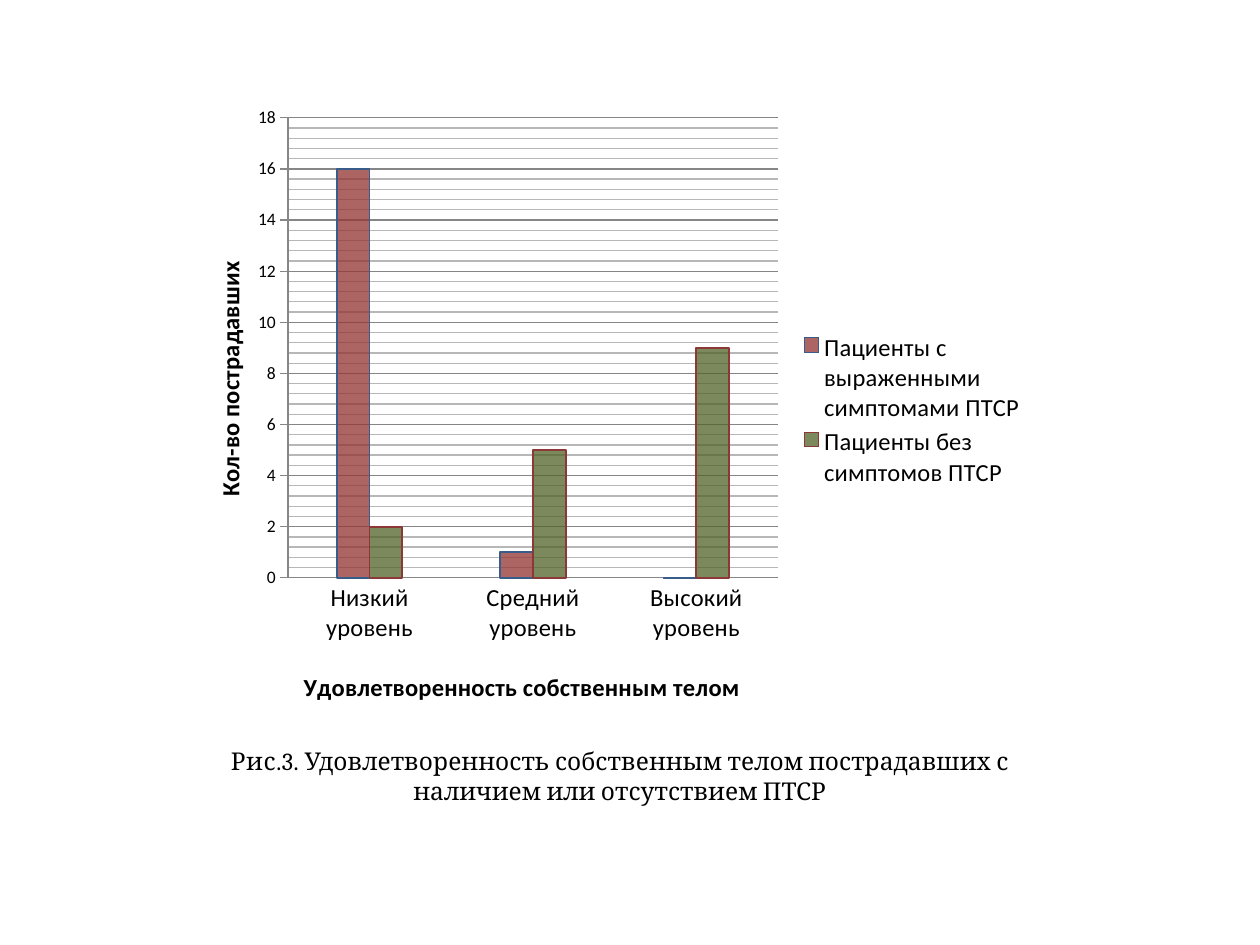
import copy

import lxml.etree
import pptx
import pptx.chart.data
import pptx.dml.color
import pptx.enum.chart
import pptx.enum.text
import pptx.oxml.ns
import pptx.util

RGBColor = pptx.dml.color.RGBColor
qn = pptx.oxml.ns.qn

PX = 914400 / 126  # EMU in one px
BLACK = RGBColor(0x00, 0x00, 0x00)
GRID = RGBColor(0x86, 0x86, 0x86)
MINOR_GRID = RGBColor(0xB7, 0xB7, 0xB7)
RED = RGBColor(0x95, 0x37, 0x35)
GREEN = RGBColor(0x4F, 0x62, 0x28)
BLUE_EDGE = RGBColor(0x38, 0x5D, 0x8A)
RED_EDGE = RGBColor(0x8C, 0x38, 0x36)

CATEGORIES = ["Низкий уровень", "Средний уровень", "Высокий уровень"]
# name, values, fill, opacity in percent, edge
SERIES = [
    ("Пациенты с выраженными симптомами ПТСР", (16, 1, 0), RED, 77, BLUE_EDGE),
    ("Пациенты без симптомов ПТСР", (2, 5, 9), GREEN, 75, RED_EDGE),
]


def emu(px):
    return pptx.util.Emu(round(px * PX))


def format_font(font, size, bold=False, name="Calibri"):
    font.name = name
    font.size = pptx.util.Pt(size)
    font.bold = bold
    font.color.rgb = BLACK


def add_text(paragraph, text, size=14, bold=False, name="Calibri", spacing=0):
    run = paragraph.add_run()
    run.text = text
    format_font(run.font, size, bold, name)
    if spacing:
        run.font._element.set("spc", str(round(spacing * 100)))


def place(element, after, target=None, **fractions):
    """Give a chart part a manual layout, in fractions of the chart."""
    for old in element.findall(qn("c:layout")):
        element.remove(old)
    layout = lxml.etree.Element(qn("c:layout"))
    manual = lxml.etree.SubElement(layout, qn("c:manualLayout"))
    values = {"layoutTarget": target} if target else {}
    values.update(xMode="edge", yMode="edge", **fractions)
    for tag, value in values.items():
        lxml.etree.SubElement(manual, qn("c:" + tag)).set("val", str(value))
    position = 0
    if after:
        position = element.index(element.find(qn(after))) + 1
    element.insert(position, layout)


def format_line(line, color, width=0.75):
    line.color.rgb = color
    line.width = pptx.util.Pt(width)


def format_gridlines(axis):
    """Minor gridlines take the major format with a lighter colour."""
    axis.has_major_gridlines = axis.has_minor_gridlines = True
    format_line(axis.major_gridlines.format.line, GRID)
    major = axis._element.find(qn("c:majorGridlines"))
    minor = axis._element.find(qn("c:minorGridlines"))
    minor.append(copy.deepcopy(major.find(qn("c:spPr"))))
    minor.find(".//" + qn("a:srgbClr")).set("val", str(MINOR_GRID))


def add_axis_title(axis, text, x, y, rotation=0):
    title = axis.axis_title
    add_text(title.text_frame.paragraphs[0], text, bold=True)
    body = title._element.find(".//" + qn("a:bodyPr"))
    body.set("rot", str(rotation * 60000))
    body.set("vert", "horz")
    place(title._element, "c:tx", x=x, y=y)


def add_satisfaction_chart(slide, left, top, width, height):
    data = pptx.chart.data.CategoryChartData()
    data.categories = CATEGORIES
    for name, values, *_ in SERIES:
        data.add_series(name, values)
    chart = slide.shapes.add_chart(
        pptx.enum.chart.XL_CHART_TYPE.COLUMN_CLUSTERED,
        emu(left), emu(top), emu(width), emu(height), data).chart
    chart.has_title = False
    format_font(chart.font, 10)
    place(chart._chartSpace.chart.plotArea, None, "inner",
          x=0.132, y=0.035, w=0.568, h=0.735)

    # Columns
    plot = chart.plots[0]
    plot.gap_width = 300
    plot.overlap = 0
    plot.vary_by_categories = False
    for series, (_, _, color, opacity, edge) in zip(plot.series, SERIES):
        series.format.fill.solid()
        series.format.fill.fore_color.rgb = color
        fill = series._element.find(
            "/".join(map(qn, ("c:spPr", "a:solidFill", "a:srgbClr"))))
        lxml.etree.SubElement(fill, qn("a:alpha")).set("val", str(opacity * 1000))
        format_line(series.format.line, edge, 1)

    # Axes
    tick = pptx.enum.chart.XL_TICK_MARK
    category_axis, value_axis = chart.category_axis, chart.value_axis
    category_axis.major_tick_mark = tick.NONE
    format_font(category_axis.tick_labels.font, 14)
    value_axis.major_tick_mark = tick.OUTSIDE
    value_axis.minimum_scale, value_axis.maximum_scale = 0, 18
    value_axis.major_unit, value_axis.minor_unit = 2, 0.4
    format_gridlines(value_axis)
    for axis in (category_axis, value_axis):
        format_line(axis.format.line, GRID)
    add_axis_title(category_axis, "Удовлетворенность собственным телом", 0.145, 0.91)
    add_axis_title(value_axis, "Кол-во пострадавших", 0.04, 0.257, -90)

    # Legend
    chart.has_legend = True
    legend = chart.legend
    legend.position = pptx.enum.chart.XL_LEGEND_POSITION.RIGHT
    legend.include_in_layout = False
    format_font(legend.font, 14)
    place(legend._element, "c:legendPos", x=0.72, y=0.372, w=0.27, h=0.26)


def add_caption(slide, left, top, width, height):
    frame = slide.shapes.add_textbox(
        emu(left), emu(top), emu(width), emu(height)).text_frame
    frame.word_wrap = True
    frame.margin_left = frame.margin_right = emu(30)
    paragraph = frame.paragraphs[0]
    paragraph.alignment = pptx.enum.text.PP_ALIGN.CENTER
    add_text(paragraph, "Рис.3. ", name="Cambria", spacing=0.3)
    add_text(paragraph, "Удовлетворенность собственным телом пострадавших с "
             "наличием или отсутствием ПТСР", name="Cambria")


def main():
    presentation = pptx.Presentation()
    presentation.slide_width, presentation.slide_height = emu(1260), emu(945)
    slide = presentation.slides.add_slide(presentation.slide_layouts[6])
    add_caption(slide, 154, 740, 932, 111)
    add_satisfaction_chart(slide, 174, 96, 863, 626)
    presentation.save("out.pptx")


if __name__ == "__main__":
    main()
